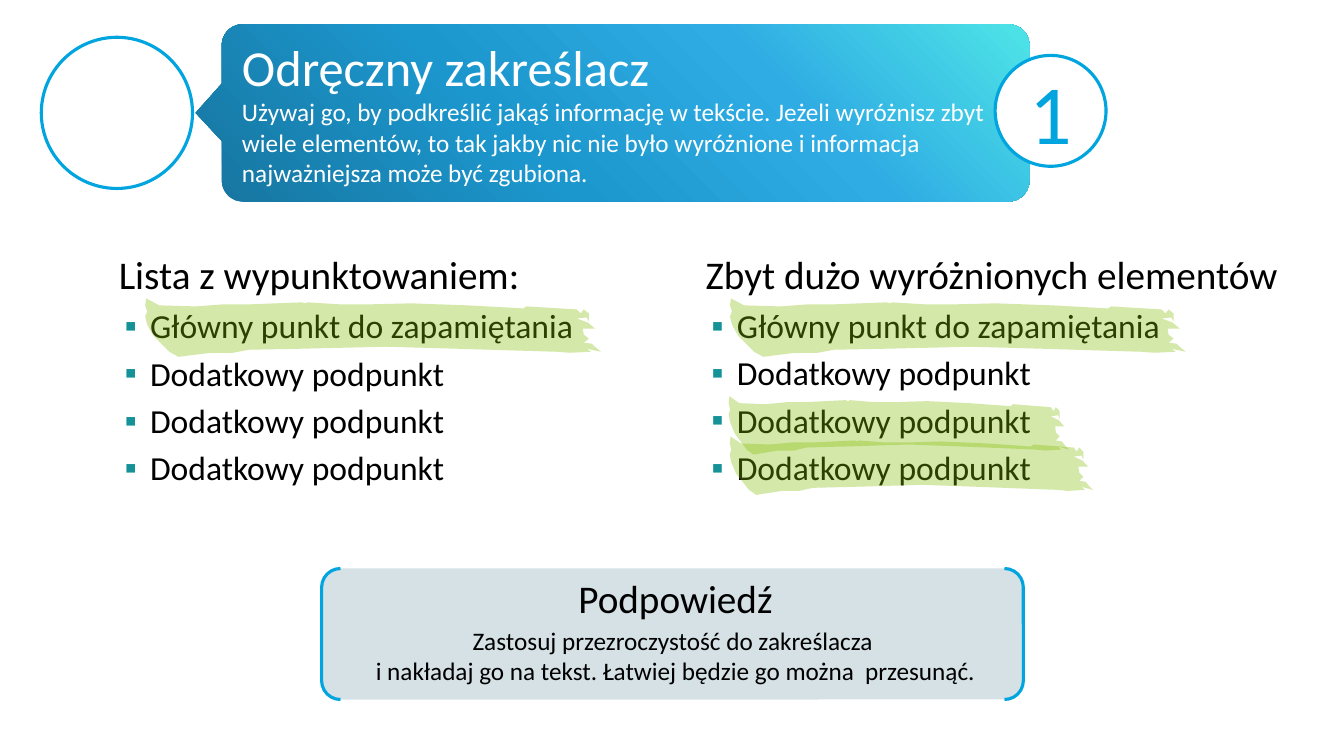
from math import cos, radians, sin

from lxml import etree
from pptx import Presentation
from pptx.dml.color import RGBColor
from pptx.enum.shapes import MSO_SHAPE
from pptx.enum.text import MSO_ANCHOR, MSO_AUTO_SIZE, PP_ALIGN
from pptx.oxml.ns import qn
from pptx.util import Inches, Pt

OVAL, BRACKET = MSO_SHAPE.OVAL, MSO_SHAPE.DOUBLE_BRACKET
TOP, MIDDLE = MSO_ANCHOR.TOP, MSO_ANCHOR.MIDDLE
LEFT, CENTER = PP_ALIGN.LEFT, PP_ALIGN.CENTER
FIXED = MSO_AUTO_SIZE.NONE

HUES = {"white": "FFFFFF", "black": "000000", "blue": "00A4DE",
        "teal": "149298", "green": "83BD03", "gray": "D6E1E6"}
BLEND = [(0, "16749E"), (38, "1C97CE"), (69, "2FACE3"), (98, "4CE0E7")]

# Edge of one marker stroke, in inches from its top left corner
STROKE_WIDTH = 4.53
STROKE = [
    (.02, 0), (.15, .07), (.51, .08), (.78, .06), (1.03, .06), (1.56, .04),
    (1.6, .05), (1.62, .04), (1.95, .06), (2.22, .06), (2.65, .05),
    (3.21, .07), (3.76, .1), (3.79, .08), (4.29, .11), (4.33, .15),
    (4.36, .11), (4.41, .15), (4.41, .23), (4.39, .19), (4.29, .2),
    (4.4, .24), (4.47, .3), (4.35, .3), (4.36, .36), (4.41, .4),
    (4.36, .44), (4.44, .45), (4.47, .48), (4.53, .53), (4.39, .5),
    (4.43, .53), (4.22, .54), (4.09, .53), (3.1, .5), (2.4, .48),
    (1.56, .5), (1.04, .51), (.88, .54), (.66, .54), (.34, .58),
    (.25, .53), (.09, .37), (.03, .26), (.01, .18), (.03, .13), (.01, .07)]


def rgb(name):
    return RGBColor.from_string(HUES[name])


def add_text(para, text, size=18, color="black", align=LEFT, before=0,
             after=0, spacing=1.0, margin=0, indent=0, bullet=None):
    """Write text into a paragraph; a newline becomes a line break."""
    props = para._p.get_or_add_pPr()
    props.set("marL", str(Inches(margin)))
    props.set("indent", str(Inches(indent)))
    if bullet:
        tint = etree.SubElement(props, qn("a:buClr"))
        etree.SubElement(tint, qn("a:srgbClr"), val=HUES["teal"])
        etree.SubElement(props, qn("a:buFont"), typeface="Calibri")
        etree.SubElement(props, qn("a:buChar"), char=bullet)
    para.alignment, para.line_spacing = align, spacing
    para.space_before, para.space_after = Pt(before), Pt(after)
    for i, line in enumerate(text.split("\n")):
        if i:
            para.add_line_break()
        run = para.add_run()
        run.text = line
        run.font.name, run.font.size = "Calibri", Pt(size)
        run.font.color.rgb = rgb(color)


class Board:
    def __init__(self, deck):
        self.slide = deck.slides.add_slide(deck.slide_layouts[5])
        self.shapes = self.slide.shapes

    def frame(self, shape, anchor):
        frame = shape.text_frame
        frame.word_wrap, frame.auto_size = True, FIXED
        frame.vertical_anchor = anchor
        return frame

    def title(self, box, head, body):
        title = self.shapes.title
        title.left, title.top, title.width, title.height = map(Inches, box)
        self.shapes._spTree.append(title._element)
        para = self.frame(title, MIDDLE).paragraphs[0]
        add_text(para, head, size=36, color="white")
        para.add_line_break()
        add_text(para, body, color="white")

    def outline(self, points):
        edge = [(Inches(x), Inches(y)) for x, y in points]
        pen = self.shapes.build_freeform(*edge[0])
        pen.add_line_segments(edge[1:], close=True)
        shape = pen.convert_to_shape()
        shape.shadow.inherit = False
        shape.line.fill.background()
        return shape

    def banner(self, left, top, right, bottom, radius, tip):
        points = []
        corners = [(right - radius, top + radius, 270),
                   (right - radius, bottom - radius, 0),
                   (left + radius, bottom - radius, 90),
                   (left + radius, top + radius, 180)]
        for x, y, start in corners:
            if start == 180:
                points += [(left, tip[1] + .28), tip, (left, tip[1] - .29)]
            for turn in range(start, start + 91, 10):
                points.append((x + radius * cos(radians(turn)),
                               y + radius * sin(radians(turn))))
        fill = self.outline(points).fill
        fill.gradient()
        fill.gradient_angle = 45
        stops = fill._fill._gradFill.find(qn("a:gsLst"))
        stops.clear()
        for place, tint in BLEND:
            stop = etree.SubElement(stops, qn("a:gs"), pos=str(place * 1000))
            etree.SubElement(stop, qn("a:srgbClr"), val=tint)

    def marker(self, left, top, width):
        ratio = width / STROKE_WIDTH
        shape = self.outline([(left + x * ratio, top + y) for x, y in STROKE])
        shape.fill.solid()
        shape.fill.fore_color.rgb = rgb("green")
        tint = shape._element.spPr.find(".//" + qn("a:srgbClr"))
        etree.SubElement(tint, qn("a:alpha"), val="34000")

    def panel(self, kind, box, fill="white"):
        shape = self.shapes.add_shape(kind, *map(Inches, box))
        shape.shadow.inherit = False
        shape.fill.solid()
        shape.fill.fore_color.rgb = rgb(fill)
        shape.line.color.rgb, shape.line.width = rgb("blue"), Pt(2.25)
        return shape

    def list(self, box, head, items):
        frame = self.frame(self.shapes.add_textbox(*map(Inches, box)), TOP)
        add_text(frame.paragraphs[0], head, size=28, after=3, spacing=.9,
                 margin=.25, indent=-.25)
        for item in items:
            add_text(frame.add_paragraph(), item, size=24, before=5, after=3,
                     spacing=.9, margin=.31, indent=-.25, bullet="▪")


def main():
    deck = Presentation()
    deck.slide_width, deck.slide_height = Inches(13.33), Inches(7.5)
    board = Board(deck)

    # Header
    board.banner(2.2, .24, 10.21, 2, radius=.21, tip=(1.94, 1.12))
    board.panel(OVAL, (.41, .37, 1.5, 1.5))
    board.title((2.3, .25, 7.57, 1.72), "Odręczny zakreślacz",
                "Używaj go, by podkreślić jakąś informację w tekście. Jeżeli "
                "wyróżnisz zbyt wiele elementów, to tak jakby nic nie było "
                "wyróżnione i informacja najważniejsza może być zgubiona.")

    # Two lists
    items = ["Główny punkt do zapamiętania"] + ["Dodatkowy podpunkt"] * 3
    board.list((1.08, 2.49, 5.51, 3.15), "Lista z wypunktowaniem:", items)
    board.list((6.9, 2.49, 5.9, 2.6), "Zbyt dużo wyróżnionych elementów",
               items)

    # Number badge
    badge = board.panel(OVAL, (9.87, .55, 1.1, 1.1))
    add_text(board.frame(badge, MIDDLE).paragraphs[0], "1", size=60,
             color="blue", align=CENTER)

    # Hint
    hint = board.panel(BRACKET, (3.19, 5.64, 6.96, 1.3), fill="gray")
    hint.adjustments[0] = .144
    frame = board.frame(hint, MIDDLE)
    frame.margin_top, frame.margin_bottom = Inches(.12), Inches(.2)
    add_text(frame.paragraphs[0], "Podpowiedź", size=28, align=CENTER,
             after=3, margin=.06)
    add_text(frame.add_paragraph(),
             "Zastosuj przezroczystość do zakreślacza \n"
             "i nakładaj go na tekst. Łatwiej będzie go można  przesunąć.",
             align=CENTER, after=3, margin=.06)

    # Marker strokes over the text
    for spot in [(1.43, 2.96, 4.53), (7.23, 2.96, 4.53),
                 (7.22, 3.93, 3.38), (7.23, 4.33, 3.61)]:
        board.marker(*spot)

    deck.save("out.pptx")


if __name__ == "__main__":
    main()
